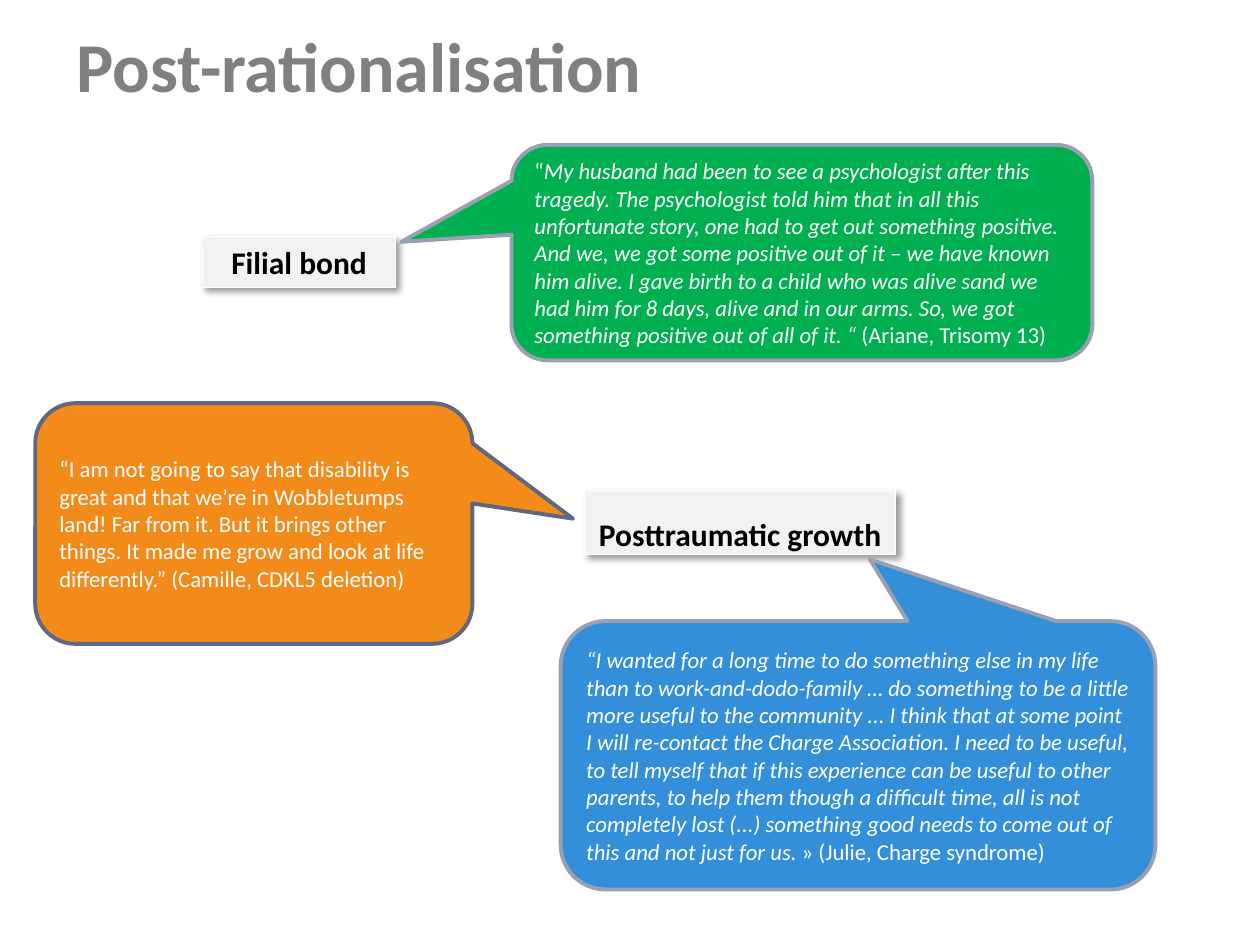
from dataclasses import dataclass

import pptx
import pptx.dml.color
import pptx.enum.shapes
import pptx.enum.text
import pptx.oxml.ns
import pptx.util
from lxml import etree

Inches = pptx.util.Inches
Pt = pptx.util.Pt
RGB = pptx.dml.color.RGBColor.from_string
SHAPE = pptx.enum.shapes.MSO_SHAPE
ALIGN = pptx.enum.text.PP_ALIGN
ANCHOR = pptx.enum.text.MSO_ANCHOR


@dataclass(frozen=True)
class Theme:
    font: str = "Calibri"
    title_size: int = 40
    label_size: int = 18
    quote_size: int = 13
    title: str = "808080"
    black: str = "000000"
    white: str = "FFFFFF"
    label_fill: str = "F2F2F2"
    green: str = "00B050"
    orange: str = "F28B1A"
    blue: str = "338FD9"
    light_edge: str = "98A0B2"
    dark_edge: str = "5E687E"


@dataclass(frozen=True)
class Label:
    box: tuple[float, float, float, float]
    text: str
    line_spacing: float = 1.0
    wrap: bool = True


@dataclass(frozen=True)
class Quote:
    box: tuple[float, float, float, float]
    tail: tuple[float, float]  # tip, as a share of the size from the centre
    fill: str
    edge: str
    runs: tuple[tuple[str, bool], ...]  # text, italic


T = Theme()

LABELS = (
    Label((1.61, 1.88, 1.53, 0.4), "Filial bond"),
    Label((4.64, 3.89, 2.47, 0.51), "Posttraumatic growth", 1.5, False),
)

QUOTES = (
    Quote((4.06, 1.15, 4.61, 1.71), (-0.69, -0.05), T.green, T.light_edge, (
        ("“", False),
        ("My husband had been to see a psychologist after this tragedy. "
         "The psychologist told him that in all this unfortunate story, one "
         "had to get out something positive. And we, we got some positive out "
         "of it – we have known him alive. I gave birth to a child who was "
         "alive sand we had him for 8 days, alive and in our arms. So, we got "
         "something positive out of all of it. “ ", True),
        ("(Ariane, Trisomy 13)", False),
    )),
    Quote((0.28, 3.2, 3.47, 1.91), (0.73, -0.02), T.orange, T.dark_edge, (
        ("“I am not going to say that disability is great and that we’re in "
         "Wobbletumps land! Far from it. But it brings other things. It made "
         "me grow and look at life differently.” (Camille, CDKL5 deletion)",
         False),
    )),
    Quote((4.45, 4.93, 4.72, 2.13), (0.02, -0.73), T.blue, T.light_edge, (
        ("“I wanted for a long time to do something else in my life than to "
         "work-and-dodo-family … do something to be a little more useful to "
         "the community ... I think that at some point I will re-contact the "
         "Charge Association. I need to be useful, to tell myself that if "
         "this experience can be useful to other parents, to help them though "
         "a difficult time, all is not completely lost (...) something good "
         "needs to come out of this and not just for us.", True),
        (" » (Julie, Charge syndrome)", False),
    )),
)


def set_font(p, size: int, color: str, bold: bool = False) -> None:
    p.font.name = T.font
    p.font.size = Pt(size)
    p.font.bold = bold
    p.font.color.rgb = RGB(color)


def add_box(s, kind, box: tuple, fill: str, edge: str, width: float):
    sp = s.shapes.add_shape(kind, *map(Inches, box))
    sp.shadow.inherit = False
    sp.fill.solid()
    sp.fill.fore_color.rgb = RGB(fill)
    sp.line.color.rgb = RGB(edge)
    sp.line.width = Pt(width)
    sp.text_frame.word_wrap = True
    return sp


def add_drop_shadow(sp) -> None:
    qn = pptx.oxml.ns.qn
    effects = sp._element.spPr.find(qn("a:effectLst"))
    shadow = etree.SubElement(
        effects, qn("a:outerShdw"), blurRad=str(Pt(4)), dist=str(Pt(3)),
        dir=str(45 * 60000), algn="tl", rotWithShape="0")
    color = etree.SubElement(shadow, qn("a:srgbClr"), val=T.black)
    etree.SubElement(color, qn("a:alpha"), val="40000")


def add_label(s, label: Label) -> None:
    sp = add_box(s, SHAPE.RECTANGLE, label.box, T.label_fill, T.white, 0.75)
    add_drop_shadow(sp)
    tf = sp.text_frame
    tf.word_wrap = label.wrap
    tf.vertical_anchor = ANCHOR.TOP
    p = tf.paragraphs[0]
    p.text = label.text
    p.alignment = ALIGN.CENTER
    p.line_spacing = label.line_spacing
    set_font(p, T.label_size, T.black, bold=True)


def add_quote(s, quote: Quote) -> None:
    sp = add_box(s, SHAPE.ROUNDED_RECTANGULAR_CALLOUT, quote.box,
                 quote.fill, quote.edge, 2.25)
    sp.adjustments[0], sp.adjustments[1] = quote.tail
    tf = sp.text_frame
    tf.vertical_anchor = ANCHOR.MIDDLE
    p = tf.paragraphs[0]
    p.alignment = ALIGN.LEFT
    set_font(p, T.quote_size, T.white)
    for text, italic in quote.runs:
        r = p.add_run()
        r.text = text
        r.font.italic = italic


def add_title(s, text: str) -> None:
    sp = s.shapes.title
    sp.left, sp.top, sp.width, sp.height = map(Inches, (0.51, 0.13, 9.49, 1.25))
    tf = sp.text_frame
    tf.auto_size = pptx.enum.text.MSO_AUTO_SIZE.NONE
    tf.vertical_anchor = ANCHOR.TOP
    p = tf.paragraphs[0]
    p.text = text
    p.alignment = ALIGN.LEFT
    set_font(p, T.title_size, T.title, bold=True)


def main() -> None:
    prs = pptx.Presentation()
    prs.slide_width, prs.slide_height = Inches(10), Inches(7.5)
    s = prs.slides.add_slide(prs.slide_layouts[5])  # title only

    add_title(s, "Post-rationalisation")
    # Themes
    for label in LABELS:
        add_label(s, label)
    # Parents' quotes
    for quote in QUOTES:
        add_quote(s, quote)

    prs.save("out.pptx")


if __name__ == "__main__":
    main()
